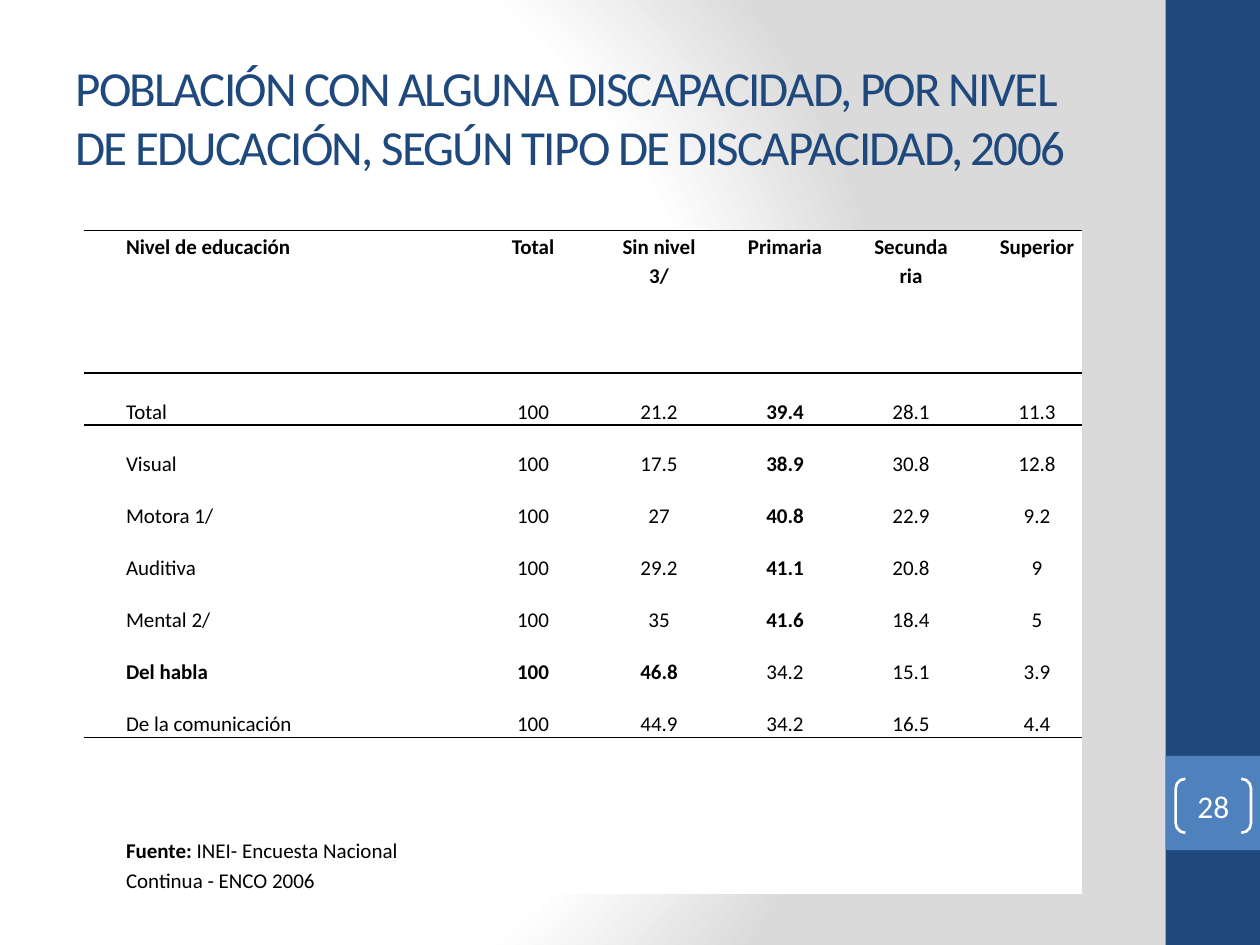
import lxml.etree
import pptx
import pptx.dml.color
import pptx.enum.shapes
import pptx.enum.text
import pptx.oxml
import pptx.oxml.ns
import pptx.util

Cm = pptx.util.Cm
Pt = pptx.util.Pt
RGBColor = pptx.dml.color.RGBColor
ANCHOR = pptx.enum.text.MSO_ANCHOR
ALIGN = pptx.enum.text.PP_ALIGN
SHAPE = pptx.enum.shapes.MSO_SHAPE
qn = pptx.oxml.ns.qn

NAVY = RGBColor(0x1F, 0x49, 0x7D)
BLUE = RGBColor(0x4F, 0x81, 0xBD)
WHITE = RGBColor(0xFF, 0xFF, 0xFF)
GREY = RGBColor(0xDA, 0xDA, 0xDA)
BLACK = RGBColor(0, 0, 0)


def add_run(paragraph, text, size, color, bold=False):
    run = paragraph.add_run()
    run.text = text
    run.font.color.rgb = color
    for name, value in {"name": "Calibri", "size": Pt(size), "bold": bold}.items():
        setattr(run.font, name, value)
    return run


def add_border(cell, side, color, width):
    """Draw one cell edge; side is lnT or lnB, given in that order."""
    properties = cell._tc.get_or_add_tcPr()
    line = lxml.etree.Element(qn("a:" + side), w=str(Pt(width)))
    fill = lxml.etree.SubElement(line, qn("a:solidFill"))
    lxml.etree.SubElement(fill, qn("a:srgbClr"), val=str(color))
    properties.find(qn("a:solidFill")).addprevious(line)


presentation = pptx.Presentation()
presentation.slide_width = Cm(25.4)
presentation.slide_height = Cm(19.05)
slide = presentation.slides.add_slide(presentation.slide_layouts[5])

# Background: radial gradient from white to grey
slide.background.fill.solid()
background = slide.element.find(".//" + qn("p:bgPr"))
gradient = pptx.oxml.parse_xml(
    f"""<a:gradFill {pptx.oxml.ns.nsdecls("a")} rotWithShape="1"><a:gsLst>
    <a:gs pos="0"><a:srgbClr val="{WHITE}"/></a:gs>
    <a:gs pos="75000"><a:srgbClr val="{WHITE}"/></a:gs>
    <a:gs pos="100000"><a:srgbClr val="{GREY}"/></a:gs></a:gsLst>
    <a:path path="circle">
    <a:fillToRect l="20000" t="50000" r="100000" b="50000"/></a:path></a:gradFill>"""
)
background.replace(background.find(qn("a:solidFill")), gradient)

# Side band and the square behind the page number
for top, height, color in [(0, 19.05, NAVY), (15.24, 1.9, BLUE)]:
    band = slide.shapes.add_shape(
        SHAPE.RECTANGLE, Cm(23.5), Cm(top), Cm(1.9), Cm(height))
    band.shadow.inherit = False
    band.fill.solid()
    band.fill.fore_color.rgb = color
    band.line.fill.background()

# Title
title = slide.shapes.title
title_box = {"left": 1.27, "top": 0.76, "width": 21.16, "height": 3.18}
for name, value in title_box.items():
    setattr(title, name, Cm(value))
title.text_frame.auto_size = pptx.enum.text.MSO_AUTO_SIZE.NONE
title.text_frame.vertical_anchor = ANCHOR.MIDDLE
paragraph = title.text_frame.paragraphs[0]
paragraph.alignment = ALIGN.LEFT
run = add_run(
    paragraph,
    "POBLACIÓN CON ALGUNA DISCAPACIDAD, POR NIVEL DE EDUCACIÓN, "
    "SEGÚN TIPO DE DISCAPACIDAD, 2006", 28, NAVY)
run.font._element.set("spc", "-100")

# Table
rows = [
    ["Nivel de educación", "Total", "Sin nivel 3/", "Primaria", "Secundaria", "Superior"],
    ["Total", "100", "21.2", "39.4", "28.1", "11.3"],
    ["Visual", "100", "17.5", "38.9", "30.8", "12.8"],
    ["Motora 1/", "100", "27", "40.8", "22.9", "9.2"],
    ["Auditiva", "100", "29.2", "41.1", "20.8", "9"],
    ["Mental 2/", "100", "35", "41.6", "18.4", "5"],
    ["Del habla", "100", "46.8", "34.2", "15.1", "3.9"],
    ["De la comunicación", "100", "44.9", "34.2", "16.5", "4.4"],
    ["", "", "", "", "", ""],
]
bold_columns = {0: range(6), 6: range(3)} | {row: [3] for row in range(1, 6)}
column_widths = [7.42] + [2.54] * 5
row_heights = [2.87] + [1.05] * 7 + [3.15]
source_row = len(rows) - 1
borders = {0: ["lnT", "lnB"], 1: ["lnT"], source_row - 1: ["lnB"], source_row: ["lnT"]}

frame = slide.shapes.add_table(
    len(rows), len(column_widths), Cm(1.7), Cm(4.65),
    Cm(sum(column_widths)), Cm(sum(row_heights)))
table = frame.table
table.first_row = False
table.horz_banding = False
NO_STYLE = "{2D5ABB26-0587-4C30-8999-92F81FD0307C}"
table._tbl.tblPr.find(qn("a:tableStyleId")).text = NO_STYLE
for column, width in zip(table.columns, column_widths):
    column.width = Cm(width)
for row, height in zip(table.rows, row_heights):
    row.height = Cm(height)

cell_format = {"margin_left": Cm(0.13), "margin_right": Cm(0.13),
               "margin_top": 0, "margin_bottom": 0}
for row_index, texts in enumerate(rows):
    for column_index, text in enumerate(texts):
        cell = table.cell(row_index, column_index)
        for name, value in cell_format.items():
            setattr(cell, name, value)
        cell.vertical_anchor = ANCHOR.BOTTOM if row_index else ANCHOR.TOP
        cell.fill.solid()
        cell.fill.fore_color.rgb = WHITE
        for side in borders.get(row_index, []):
            add_border(cell, side, BLACK, 1)
        paragraph = cell.text_frame.paragraphs[0]
        paragraph.line_spacing = 1.15
        paragraph.alignment = ALIGN.CENTER if column_index else ALIGN.LEFT
        paragraph._p.get_or_add_pPr().set("marL", str(Cm(0.71)))
        if text:
            bold = column_index in bold_columns.get(row_index, [])
            add_run(paragraph, text, 12, BLACK, bold)

source_cell = table.cell(source_row, 0)
add_border(source_cell, "lnB", WHITE, 1.5)
paragraph = source_cell.text_frame.paragraphs[0]
add_run(paragraph, "Fuente: ", 12, BLACK, bold=True)
add_run(paragraph, "INEI- Encuesta Nacional Continua - ENCO 2006", 12, BLACK)

# Page number in brackets
number = slide.shapes.add_shape(
    SHAPE.DOUBLE_BRACKET, Cm(23.7), Cm(15.7), Cm(1.52), Cm(1.09))
number.adjustments[0] = 0.18
number.shadow.inherit = False
number.fill.background()
number.line.color.rgb = WHITE
number.line.width = Pt(1.5)
number_format = {"margin_left": 0, "margin_right": 0, "margin_top": 0,
                 "margin_bottom": 0, "vertical_anchor": ANCHOR.MIDDLE}
for name, value in number_format.items():
    setattr(number.text_frame, name, value)
paragraph = number.text_frame.paragraphs[0]
paragraph.alignment = ALIGN.CENTER
add_run(paragraph, "28", 18, WHITE)

presentation.save("out.pptx")
